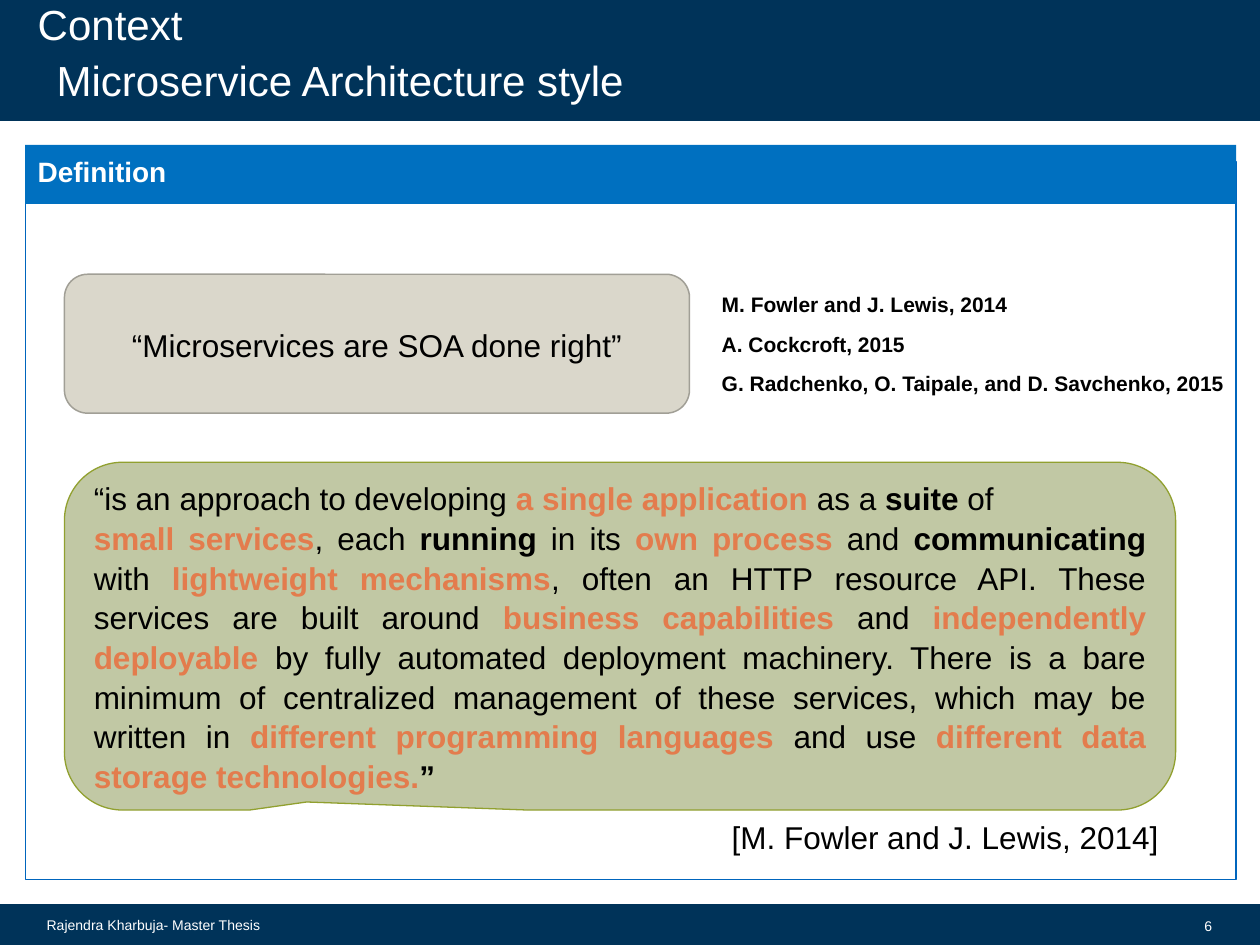
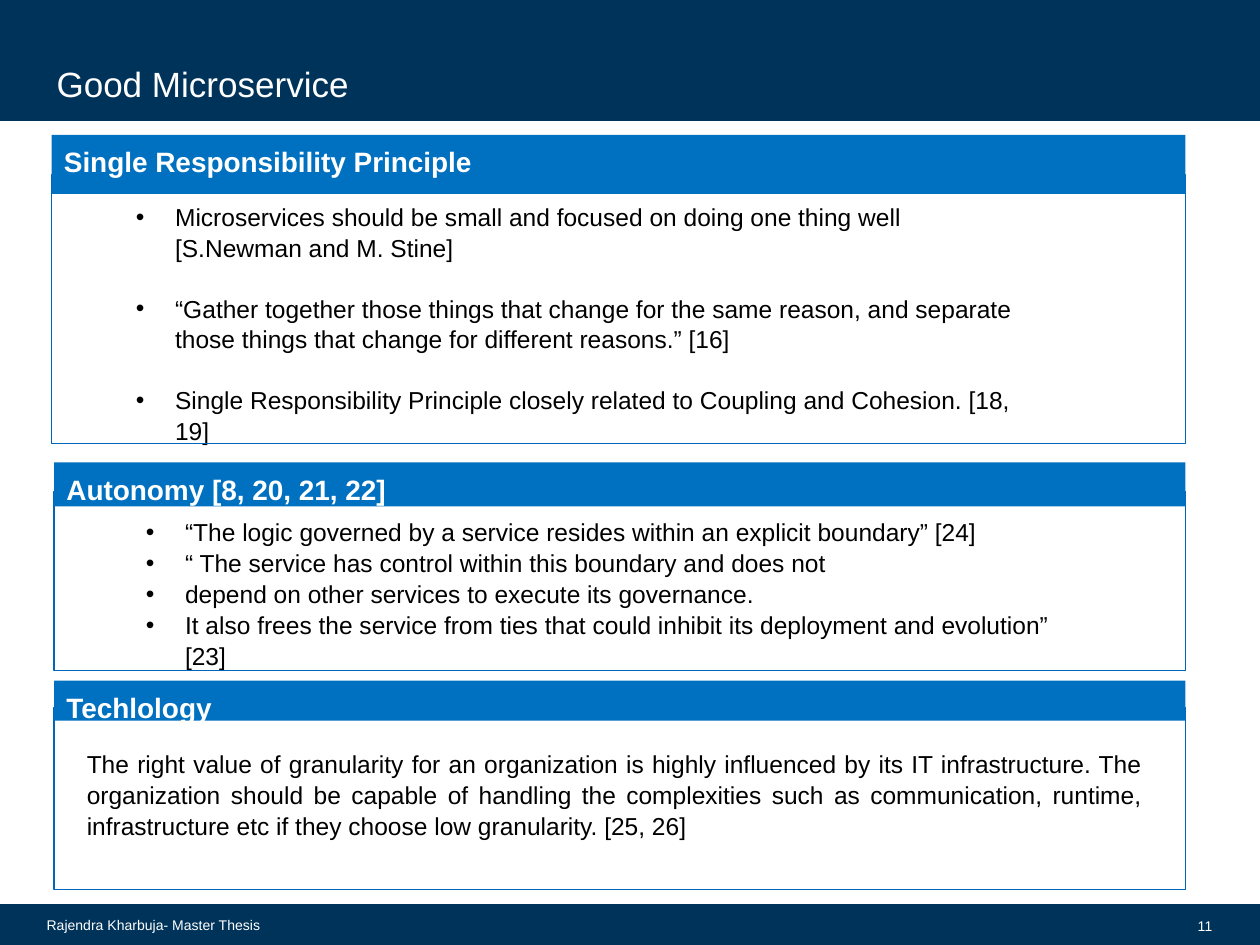
from lxml import etree
from pptx import Presentation
from pptx.dml.color import RGBColor
from pptx.enum import shapes, text
from pptx.oxml import ns
from pptx.util import Cm, Pt

NAVY = RGBColor(0x00, 0x33, 0x59)
HEADER_BLUE = RGBColor(0x00, 0x70, 0xC0)
FRAME_BLUE = RGBColor(0x00, 0x65, 0xBD)
SAGE = RGBColor(0xC1, 0xC8, 0xA4)
OLIVE = RGBColor(0x91, 0xA0, 0x2F)
STONE = RGBColor(0xDA, 0xD7, 0xCB)
GREY = RGBColor(0xA1, 0x9F, 0x96)
ORANGE = RGBColor(0xE3, 0x7C, 0x4D)
BLACK = RGBColor(0, 0, 0)
WHITE = RGBColor(0xFF, 0xFF, 0xFF)
FONT = "Arial"
FOOTER = "Rajendra Kharbuja- Master Thesis"
SHAPE = shapes.MSO_SHAPE
ALIGN = text.PP_ALIGN
ANCHOR = text.MSO_ANCHOR


def add_bullet(p):
    """Give a paragraph a hanging round bullet."""
    pPr = p._p.get_or_add_pPr()
    pPr.set("marL", str(Cm(0.79)))
    pPr.set("indent", str(-Cm(0.79)))
    etree.SubElement(pPr, ns.qn("a:buFont")).set("typeface", FONT)
    etree.SubElement(pPr, ns.qn("a:buChar")).set("char", "•")


def write(tf, paragraphs, size=14, color=BLACK, bold=False, align=ALIGN.LEFT,
          anchor=ANCHOR.TOP, spacing=1.05, gap=0, bullets=False,
          insets=(0.25, 0.13, 0.25, 0.13)):
    """Fill a text frame with paragraphs, each a string or a list of (text, color, bold)."""
    tf.word_wrap = True
    tf.auto_size = text.MSO_AUTO_SIZE.NONE
    tf.vertical_anchor = anchor
    tf.margin_left, tf.margin_top, tf.margin_right, tf.margin_bottom = map(Cm, insets)
    for i, runs in enumerate(paragraphs):
        p = tf.add_paragraph() if i else tf.paragraphs[0]
        p.alignment = align
        p.line_spacing = spacing
        p.space_before = Pt(gap if i else 0)
        if bullets:
            add_bullet(p)
        if isinstance(runs, str):
            runs = [(runs, color, bold)]
        for words, run_color, run_bold in runs:
            r = p.add_run()
            r.text = words
            r.font.name = FONT
            r.font.size = Pt(size)
            r.font.bold = run_bold
            r.font.color.rgb = run_color


class Deck:
    """Thesis slide style together with the slide being built."""

    def __init__(self):
        """Start an empty 4:3 presentation."""
        self.prs = Presentation()
        self.prs.slide_width, self.prs.slide_height = Cm(25.4), Cm(19.05)
        self.s = None

    def new_slide(self, layout, number):
        """Add a slide with its bands, footer and number."""
        self.s = self.prs.slides.add_slide(self.prs.slide_layouts[layout])
        for y, h in ((0, 2.41), (18.24, 0.81)):
            sp = self.shape(SHAPE.RECTANGLE, (0, y, 25.4, h), NAVY, NAVY, 1.35)
            self.s.shapes._spTree.insert(2, sp._element)
        small = dict(size=8, color=WHITE, anchor=ANCHOR.MIDDLE)
        self.textbox((0.69, 18.24, 5.41, 0.81), [FOOTER], **small)
        self.textbox((24, 18.26, 0.69, 0.81), [str(number)], align=ALIGN.RIGHT,
                     insets=(0, 0.13, 0.25, 0.13), **small)

    def shape(self, kind, box, fill=None, line=None, width=0.75):
        """Add a flat preset shape."""
        sp = self.s.shapes.add_shape(kind, *map(Cm, box))
        sp.shadow.inherit = False
        if fill is None:
            sp.fill.background()
        else:
            sp.fill.solid()
            sp.fill.fore_color.rgb = fill
        if line is None:
            sp.line.fill.background()
        else:
            sp.line.color.rgb = line
            sp.line.width = Pt(width)
        return sp

    def textbox(self, box, paragraphs, **fmt):
        """Add a text box."""
        write(self.s.shapes.add_textbox(*map(Cm, box)).text_frame, paragraphs, **fmt)

    def placeholder(self, idx, box, paragraphs, **fmt):
        """Move and fill a placeholder of the layout."""
        sp = self.s.placeholders[idx]
        sp.left, sp.top, sp.width, sp.height = map(Cm, box)
        write(sp.text_frame, paragraphs, **fmt)

    def heading(self, words, x, y, size=24, title=True):
        """Write a line in the top band, as the title or as a second line."""
        box = (x, y, 20.93, 0.99)
        fmt = dict(size=size, color=WHITE, anchor=ANCHOR.BOTTOM, spacing=1,
                   insets=(0.25, 0, 0.25, 0))
        if title:
            self.placeholder(0, box, [words], **fmt)
        else:
            self.textbox(box, [words], **fmt)

    def panel(self, caption, x, w, header_y, header_h, frame_y, bottom):
        """Add a thin frame under a captioned header bar."""
        self.shape(SHAPE.RECTANGLE, (x, frame_y, w, bottom - frame_y), line=FRAME_BLUE)
        sp = self.shape(SHAPE.RECTANGLE, (x, header_y, w, header_h), HEADER_BLUE)
        write(sp.text_frame, [caption], size=16, color=WHITE, bold=True, spacing=1,
              insets=(0.25, 0.2, 0.25, 0.13))

    def bullets(self, idx, box, items, gap=0):
        """Turn a body placeholder into a bullet list."""
        self.placeholder(idx, box, items, bullets=True, gap=gap)


def plain(words):
    """Return a normal run."""
    return words, BLACK, False


def strong(words):
    """Return a bold run."""
    return words, BLACK, True


def key(words):
    """Return a highlighted run."""
    return words, ORANGE, True


def definition_slide(deck):
    """Build the slide that defines microservices."""
    deck.new_slide(5, 6)
    deck.heading("Context", 0.51, 0)
    deck.heading("Microservice Architecture style", 0.89, 1.12, title=False)
    deck.panel("Definition", 0.51, 24.41, 2.92, 1.19, 3.25, 17.73)

    quote = deck.shape(SHAPE.ROUNDED_RECTANGULAR_CALLOUT, (1.3, 9.32, 22.4, 7.01),
                       SAGE, OLIVE)
    for i, value in enumerate((-0.282, 0.477, 0.167)):
        quote.adjustments[i] = value
    write(quote.text_frame, [
        [plain("“is an approach to developing "), key("a single application "),
         plain("as a "), strong("suite"), plain(" of")],
        [key("small services"), plain(", each "), strong("running"), plain(" in its "),
         key("own process "), plain("and "), strong("communicating"), plain(" with "),
         key("lightweight mechanisms"),
         plain(", often an HTTP resource API. These services are built around "),
         key("business capabilities "), plain("and "), key("independently deployable "),
         plain("by fully automated deployment machinery. There is a bare minimum of "
               "centralized management of these services, which may be written in "),
         key("different programming languages "), plain("and use "),
         key("different data storage technologies."), strong("”")],
    ], size=18, align=ALIGN.JUSTIFY, anchor=ANCHOR.MIDDLE)
    deck.textbox((14.5, 16.33, 9.22, 1.02), ["[M. Fowler and J. Lewis, 2014]"], size=18)

    claim = deck.shape(SHAPE.ROUNDED_RECTANGLE, (1.3, 5.53, 12.6, 2.8), STONE, GREY, 0.85)
    write(claim.text_frame, ["“Microservices are SOA done right”"], size=18,
          align=ALIGN.CENTER, anchor=ANCHOR.MIDDLE)
    citations = ("M. Fowler and J. Lewis, 2014", "A. Cockcroft, 2015",
                 "G. Radchenko, O. Taipale, and D. Savchenko, 2015")
    for i, citation in enumerate(citations):
        deck.textbox((14.3, 5.72 + 0.8 * i, 10.9, 0.76), [citation], size=12, bold=True)


def good_microservice_slide(deck):
    """Build the slide on the qualities of a good microservice."""
    deck.new_slide(3, 11)
    deck.heading("Good Microservice", 0.89, 1.12, size=20)
    deck.panel("Single Responsibility Principle", 1.04, 22.86, 2.72, 1.19, 3.53, 8.94)
    deck.bullets(1, (2.49, 3.92, 18.21, 5.79), [
        "Microservices should be small and focused on doing one thing well "
        "[S.Newman and M. Stine]",
        "“Gather together those things that change for the same reason, and separate "
        "those things that change for different reasons.” [16]",
        "Single Responsibility Principle closely related to Coupling and Cohesion. [18, 19]",
    ], gap=16.9)
    deck.panel("Autonomy [8, 20, 21, 22]", 1.09, 22.81, 9.32, 0.89, 9.91, 13.52)
    deck.bullets(2, (2.69, 10.27, 19, 3.24), [
        "“The logic governed by a service resides within an explicit boundary” [24]",
        "“ The service has control within this boundary and does not",
        "depend on other services to execute its governance.",
        "It also frees the service from ties that could inhibit its deployment and "
        "evolution” [23]",
    ])
    deck.panel("Techlology", 1.09, 22.81, 13.72, 0.81, 14.27, 17.93)
    deck.textbox((1.5, 14.94, 21.79, 2.06), [
        "The right value of granularity for an organization is highly influenced by its "
        "IT infrastructure. The organization should be capable of handling the "
        "complexities such as communication, runtime, infrastructure etc if they choose "
        "low granularity. [25, 26]",
    ], align=ALIGN.JUSTIFY)


def main():
    """Build and save the slides."""
    deck = Deck()
    definition_slide(deck)
    good_microservice_slide(deck)
    deck.prs.save("out.pptx")


if __name__ == "__main__":
    main()
